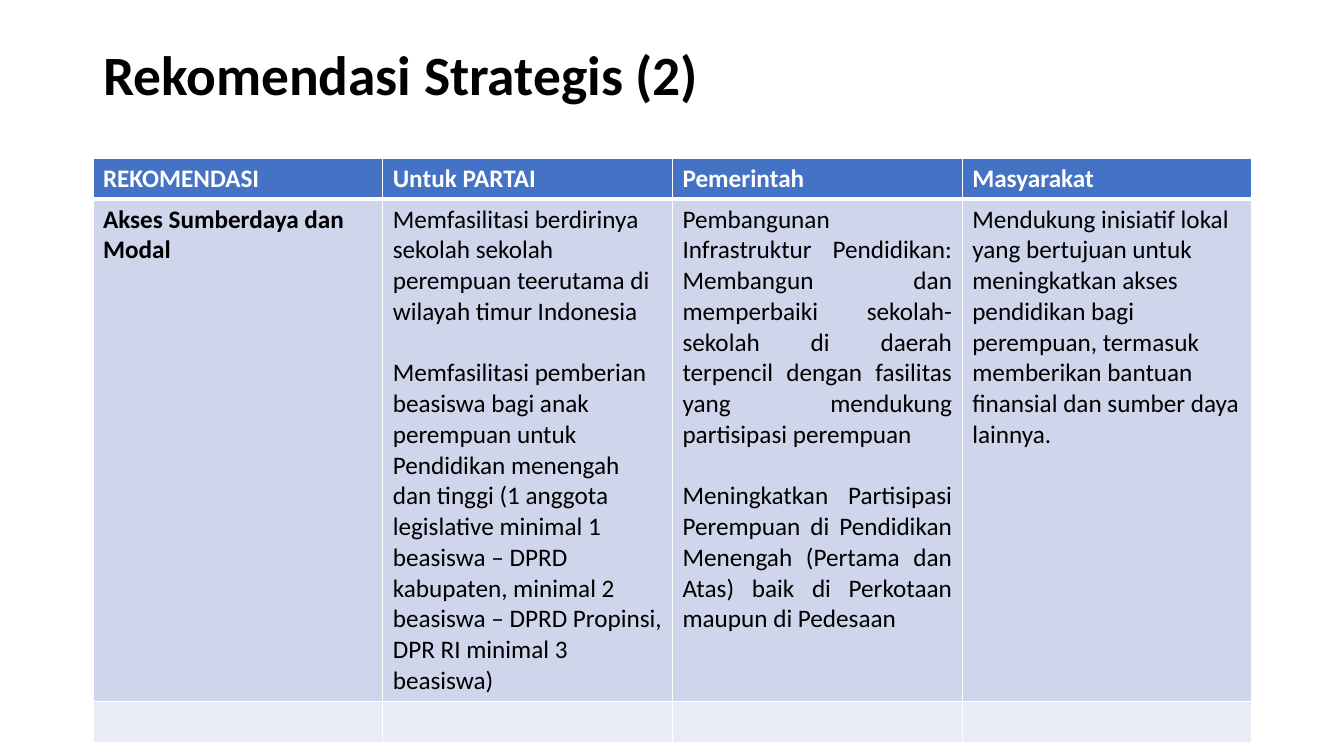
from lxml import etree
from pptx import Presentation
from pptx.dml.color import RGBColor
from pptx.enum.text import MSO_ANCHOR, MSO_AUTO_SIZE, PP_ALIGN
from pptx.oxml.ns import qn
from pptx.util import Pt

MIDDLE = MSO_ANCHOR.MIDDLE
NO_FIT = MSO_AUTO_SIZE.NONE
LEFT, JUSTIFY = PP_ALIGN.LEFT, PP_ALIGN.JUSTIFY
TITLE_ONLY = 5
FONT = "Calibri"
BLACK, WHITE = "000000", "FFFFFF"
FILLS = ["4472C4", "CFD5EA", "E9EBF5"]
ROWS = [41, 502, 41]
HEADS = ["REKOMENDASI", "Untuk PARTAI", "Pemerintah", "Masyarakat"]
BODY = [
    ["Akses Sumberdaya dan Modal"],
    ["Memfasilitasi berdirinya sekolah sekolah perempuan teerutama di "
     "wilayah timur Indonesia",
     "Memfasilitasi pemberian beasiswa bagi anak perempuan untuk Pendidikan "
     "menengah dan tinggi (1 anggota legislative minimal 1 beasiswa – DPRD "
     "kabupaten, minimal 2 beasiswa – DPRD Propinsi, DPR RI minimal 3 beasiswa)"],
    ["Pembangunan Infrastruktur Pendidikan: Membangun dan memperbaiki "
     "sekolah-sekolah di daerah terpencil dengan fasilitas yang mendukung "
     "partisipasi perempuan",
     "Meningkatkan Partisipasi Perempuan di Pendidikan Menengah (Pertama dan "
     "Atas) baik di Perkotaan maupun di Pedesaan"],
    ["Mendukung inisiatif lokal yang bertujuan untuk meningkatkan akses "
     "pendidikan bagi perempuan, termasuk memberikan bantuan finansial dan "
     "sumber daya lainnya."],
]


def px(n):
    return round(n * 914400 / 100.8)


def color(code):
    return RGBColor.from_string(code)


def style(para, size, code, bold, align=LEFT):
    para.alignment = align
    font = para.font
    font.name, font.size, font.bold = FONT, Pt(size), bold
    font.color.rgb = color(code)


def add_title(slide, x, y, w, h):
    title = slide.shapes.title
    title.left, title.top, title.width, title.height = map(px, (x, y, w, h))
    frame = title.text_frame
    frame.text = "Rekomendasi Strategis (2)"
    frame.word_wrap = True
    frame.auto_size = NO_FIT
    frame.vertical_anchor = MIDDLE
    para = frame.paragraphs[0]
    para.line_spacing = 0.9
    style(para, 39.6, BLACK, True)


def add_edges(cell, row):
    props = cell._tc.get_or_add_tcPr()
    thick = {(0, "B"), (1, "T")}
    for side in "LRTB":
        width = Pt(3 if (row, side) in thick else 1)
        line = etree.SubElement(props, qn(f"a:ln{side}"), w=str(width))
        fill = etree.SubElement(line, qn("a:solidFill"))
        etree.SubElement(fill, qn("a:srgbClr"), val=WHITE)


def fill_cell(cell, row, col, texts):
    add_edges(cell, row)
    cell.fill.solid()
    cell.fill.fore_color.rgb = color(FILLS[row])
    frame = cell.text_frame
    frame.text = "\n".join(texts)
    align = JUSTIFY if (row, col) == (1, 2) else LEFT
    for i, para in enumerate(frame.paragraphs):
        style(para, 18, BLACK if row else WHITE, row == 0 or col == 0, align)
        if i:
            para.space_before = Pt(22)


def add_grid(slide, x, y, w):
    cells = [[[head] for head in HEADS], BODY, [[] for _ in HEADS]]
    box = map(px, (x, y, w, sum(ROWS)))
    table = slide.shapes.add_table(len(ROWS), len(HEADS), *box).table
    for column in table.columns:
        column.width = px(w / len(HEADS))
    for r, height in enumerate(ROWS):
        table.rows[r].height = px(height)
        for c, texts in enumerate(cells[r]):
            fill_cell(table.cell(r, c), r, c, texts)


def main():
    deck = Presentation()
    deck.slide_width, deck.slide_height = px(1344), px(756)
    slide = deck.slides.add_slide(deck.slide_layouts[TITLE_ONLY])
    add_title(slide, 93, 40, 1159, 76)
    add_grid(slide, 93, 158, 1159)
    deck.save("out.pptx")


if __name__ == "__main__":
    main()
